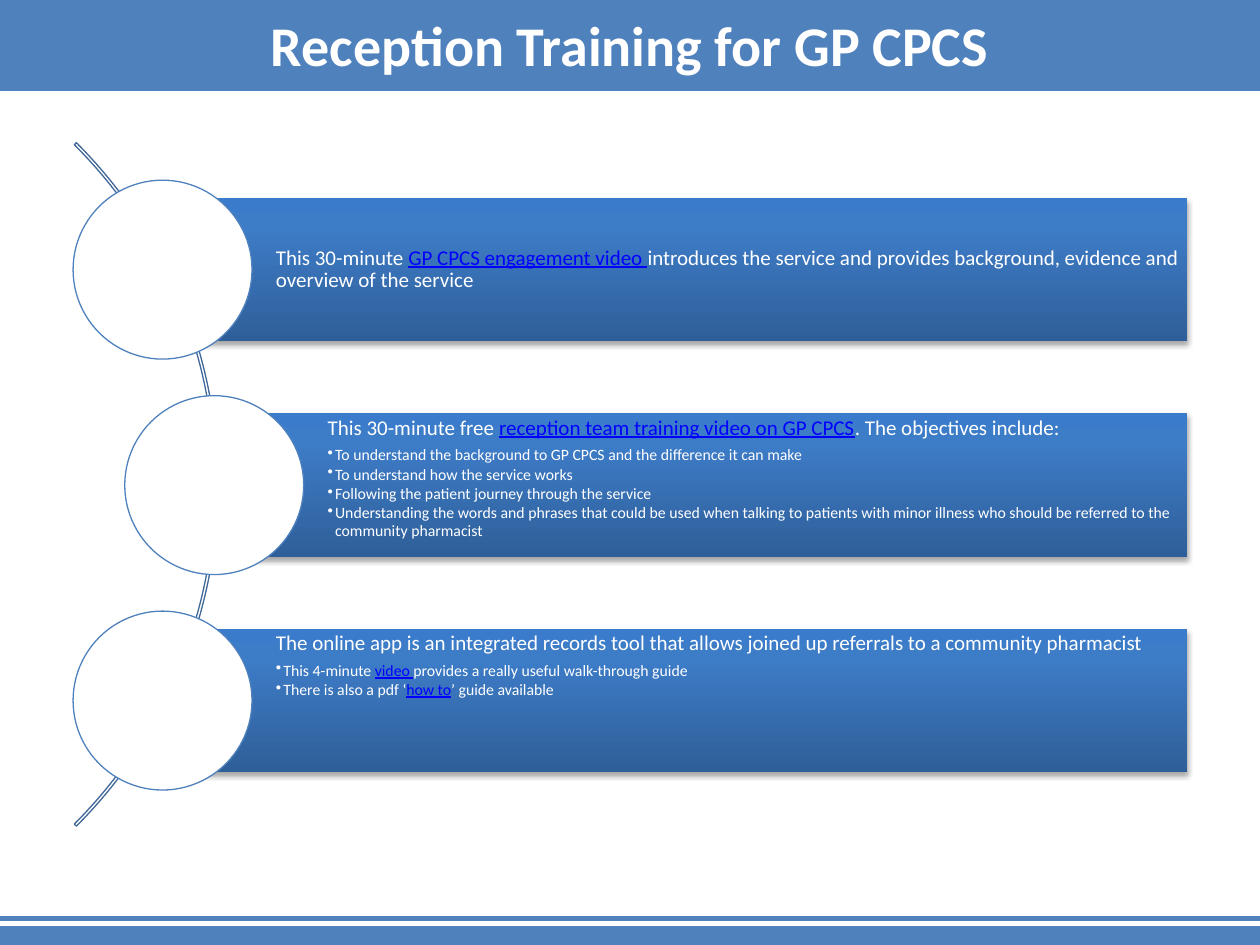
from copy import deepcopy
from dataclasses import dataclass

from lxml import etree
from pptx import Presentation
from pptx.dml.color import RGBColor
from pptx.enum.shapes import MSO_CONNECTOR, MSO_SHAPE
from pptx.enum.text import MSO_ANCHOR, PP_ALIGN
from pptx.oxml.ns import qn
from pptx.util import Inches, Pt

RECTANGLE = MSO_SHAPE.RECTANGLE
OVAL = MSO_SHAPE.OVAL
BLOCK_ARC = MSO_SHAPE.BLOCK_ARC
STRAIGHT = MSO_CONNECTOR.STRAIGHT
TOP = MSO_ANCHOR.TOP
MIDDLE = MSO_ANCHOR.MIDDLE
CENTER = PP_ALIGN.CENTER
LEFT = PP_ALIGN.LEFT
TITLE_ONLY = 5


@dataclass(frozen=True)
class Theme:
    font: str = "Calibri"
    accent: str = "4F81BD"
    arc: str = "3F6797"
    white: str = "FFFFFF"
    link: str = "0000FF"
    shadow: str = "000000"
    gradient: tuple = ((0, "2F5F99"), (0.8, "3D7CC7"), (1, "3A7CCB"))
    title_size: float = 32
    lead_size: float = 12
    bullet_size: float = 9


THEME = Theme()

STEPS = [
    {
        "lead": (
            "This 30-minute ",
            "GP CPCS engagement video ",
            "introduces the service and provides background, evidence and overview of the service",
        ),
        "bullets": [],
    },
    {
        "lead": (
            "This 30-minute free ",
            "reception team training video on GP CPCS",
            ". The objectives include:",
        ),
        "bullets": [
            ("To understand the background to GP CPCS and the difference it can make",),
            ("To understand how the service works",),
            ("Following the patient journey through the service",),
            (
                "Understanding the words and phrases that could be used when talking to patients "
                "with minor illness who should be referred to the community pharmacist",
            ),
        ],
    },
    {
        "lead": (
            "The online app is an integrated records tool that allows joined up referrals "
            "to a community pharmacist",
        ),
        "bullets": [
            ("This 4-minute ", "video ", "provides a really useful walk-through guide"),
            ("There is also a pdf ‘", "how to", "’ guide available"),
        ],
    },
]


def rgb(value):
    return RGBColor.from_string(value)


def write(paragraph, segments, size, bold=False, align=LEFT, line=None, after=0, bullet=False):
    paragraph.alignment = align
    paragraph.line_spacing = line
    paragraph.space_after = Pt(after)
    for index, segment in enumerate(segments):
        linked = index % 2 == 1
        run = paragraph.add_run()
        run.text = segment
        run.font.name = THEME.font
        run.font.size = Pt(size)
        run.font.bold = bold
        run.font.underline = linked
        run.font.color.rgb = rgb(THEME.link if linked else THEME.white)
    if bullet:
        properties = paragraph._p.get_or_add_pPr()
        properties.set("lvl", "1")
        properties.set("marL", str(Inches(0.06)))
        properties.set("indent", str(-Inches(0.06)))
        etree.SubElement(properties, qn("a:buChar"), char="•")


def add_figure(slide, kind, box, fill=None, line=None, width=0.75):
    figure = slide.shapes.add_shape(kind, *map(Inches, box))
    figure.shadow.inherit = False
    if fill:
        figure.fill.solid()
        figure.fill.fore_color.rgb = rgb(fill)
    else:
        figure.fill.background()
    if line:
        figure.line.color.rgb = rgb(line)
        figure.line.width = Pt(width)
    else:
        figure.line.fill.background()
    return figure


def shade(bar):
    bar.fill.gradient()
    bar.fill.gradient_angle = 90
    properties = bar.element.spPr
    stops = properties.find(".//" + qn("a:gsLst"))
    stops.append(deepcopy(stops[-1]))
    for stop, (position, color) in zip(bar.fill.gradient_stops, THEME.gradient):
        stop.position = position
        stop.color.rgb = rgb(color)
    shadow = etree.SubElement(
        properties.find(qn("a:effectLst")), qn("a:outerShdw"),
        blurRad=str(Pt(3.1)), dist=str(Pt(1.8)), dir="5400000", rotWithShape="0",
    )
    color = etree.SubElement(shadow, qn("a:srgbClr"), val=THEME.shadow)
    etree.SubElement(color, qn("a:alpha"), val="35000")


def add_header(slide, box):
    left, top, width, height = box
    add_figure(slide, RECTANGLE, box, THEME.accent, THEME.accent, 2)
    title = slide.shapes.title
    title.left, title.top = Inches(left + 0.5), Inches(top - 0.01)
    title.width, title.height = Inches(width - 1), Inches(height + 0.01)
    title.text_frame.vertical_anchor = MIDDLE
    write(title.text_frame.paragraphs[0], ("Reception Training for GP CPCS",),
          THEME.title_size, bold=True, align=CENTER)
    slide.shapes.element.append(title.element)


def add_footer(slide, box):
    left, top, width, _ = box
    rule_top = Inches(top - 0.07)
    rule = slide.shapes.add_connector(
        STRAIGHT, Inches(left - 0.02), rule_top, Inches(left + width), rule_top)
    rule.line.color.rgb = rgb(THEME.accent)
    rule.line.width = Pt(3)
    etree.SubElement(rule.element.spPr, qn("a:effectLst"))
    add_figure(slide, RECTANGLE, box, THEME.accent, THEME.accent, 2)


def add_step(slide, box, lead, bullets):
    left, top, width, diameter = box
    radius = diameter / 2
    bar_height = 1.14
    bar = add_figure(slide, RECTANGLE, (
        left + radius, top + (diameter - bar_height) / 2, width - radius, bar_height))
    shade(bar)
    frame = bar.text_frame
    frame.word_wrap = True
    frame.vertical_anchor = TOP if bullets else MIDDLE
    frame.margin_left = Inches(0.9)
    frame.margin_top = frame.margin_right = frame.margin_bottom = Inches(0.03)
    write(frame.paragraphs[0], lead, THEME.lead_size, line=0.9, after=4.2)
    for bullet in bullets:
        write(frame.add_paragraph(), bullet, THEME.bullet_size,
              line=0.9, after=1.35, bullet=True)
    add_figure(slide, OVAL, (left, top, diameter, diameter), THEME.white, THEME.accent)


def add_steps(slide, box):
    left, top, width, height = box
    diameter = 1.42
    pitch = (height - diameter) / (len(STEPS) - 1)
    arc = add_figure(slide, BLOCK_ARC, (left - 6.52, top - 1.42, 7.67, 7.67), line=THEME.arc)
    for index, value in enumerate((189, 27, 0.003)):
        arc.adjustments[index] = value
    for index, step in enumerate(STEPS):
        indent = 0.41 if index % 2 else 0
        add_step(slide, (left + indent, top + index * pitch, width - indent, diameter), **step)


def main():
    deck = Presentation()
    deck.slide_width, deck.slide_height = Inches(10), Inches(7.5)
    slide = deck.slides.add_slide(deck.slide_layouts[TITLE_ONLY])
    add_footer(slide, (0, 7.36, 10, 0.14))
    add_header(slide, (0, 0, 10, 0.71))
    add_steps(slide, (0.58, 1.43, 8.84, 4.84))
    deck.save("out.pptx")


if __name__ == "__main__":
    main()
